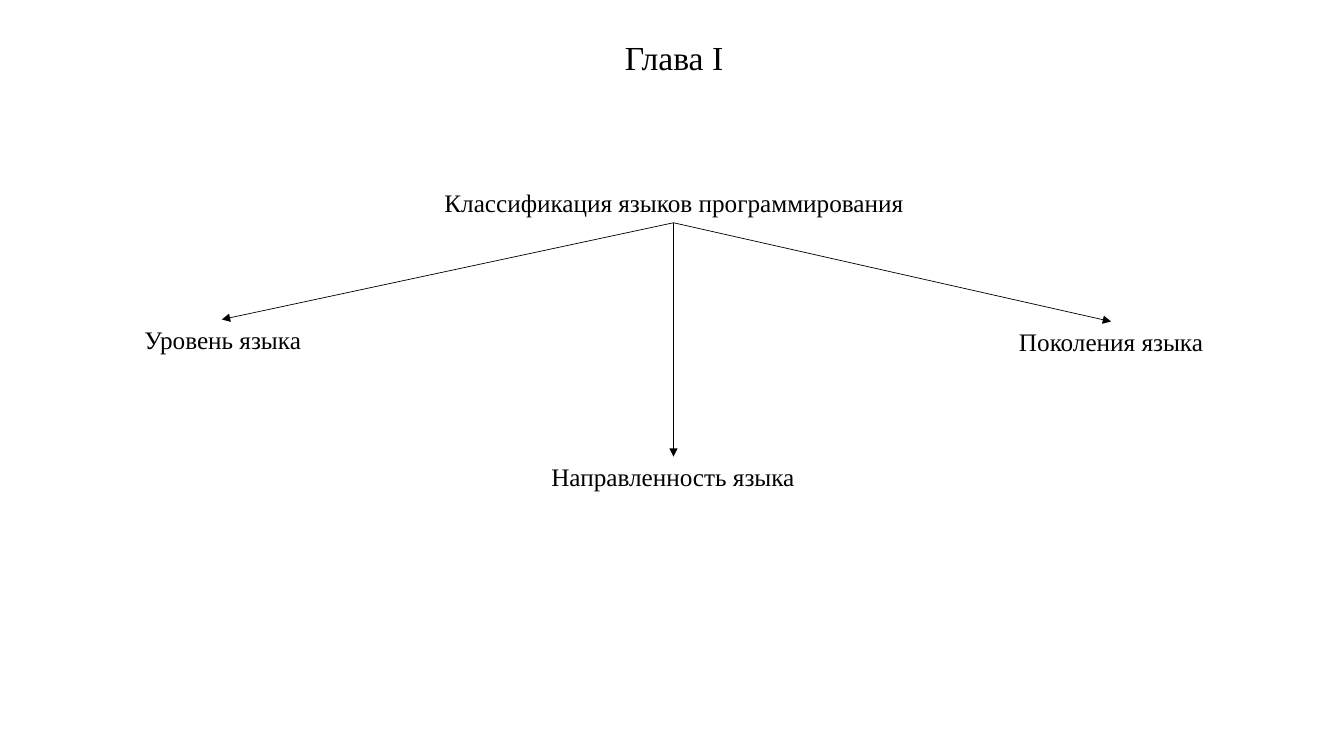
from pptx import Presentation
from pptx.dml.color import RGBColor
from pptx.enum.shapes import MSO_CONNECTOR
from pptx.enum.text import MSO_AUTO_SIZE, PP_ALIGN
from pptx.oxml.ns import qn
from pptx.util import Inches, Pt
from lxml.etree import SubElement

COLORS = {"ink": "000000", "background": "FFFFFF"}
FONT = "Times New Roman"
LEFT, WIDTH = 0.38, 12.61
ROOT_X, ROOT_Y = 6.68, 2.21

prs = Presentation()
prs.slide_width, prs.slide_height = Inches(13.33), Inches(7.5)
s = prs.slides.add_slide(prs.slide_layouts[6])
s.background.fill.solid()
s.background.fill.fore_color.rgb = RGBColor.from_string(COLORS["background"])


def add_label(text, left, top, width, height=0.4, size=18):
    tf = s.shapes.add_textbox(
        Inches(left), Inches(top), Inches(width), Inches(height)
    ).text_frame
    tf.word_wrap = True
    tf.auto_size = MSO_AUTO_SIZE.SHAPE_TO_FIT_TEXT
    p = tf.paragraphs[0]
    p.text = text
    p.alignment = PP_ALIGN.CENTER
    p.font.name = FONT
    p.font.size = Pt(size)
    p.font.color.rgb = RGBColor.from_string(COLORS["ink"])


def add_arrow(x, y):
    """Draw an arrow from under the root label to (x, y)."""
    line = s.shapes.add_connector(
        MSO_CONNECTOR.STRAIGHT, Inches(ROOT_X), Inches(ROOT_Y), Inches(x), Inches(y)
    )
    line.line.color.rgb = RGBColor.from_string(COLORS["ink"])
    line.line.width = Pt(0.5)
    SubElement(line.line._get_or_add_ln(), qn("a:tailEnd"), type="triangle")
    SubElement(line._element.spPr, qn("a:effectLst"))


add_label("Глава I", LEFT, 0.32, WIDTH, height=0.5, size=24)
add_label("Классификация языков программирования", LEFT, 1.81, WIDTH)

# Each branch: text, left, top, width, arrow tip x
branches = [
    ("Поколения языка", 9.05, 3.19, 3.94, 11.02),
    ("Направленность языка", 4.94, 4.53, 3.47, ROOT_X),
    ("Уровень языка", LEFT, 3.17, 3.66, 2.2),
]
for text, left, top, width, tip_x in branches:
    add_arrow(tip_x, top)
    add_label(text, left, top, width)

prs.save("out.pptx")
